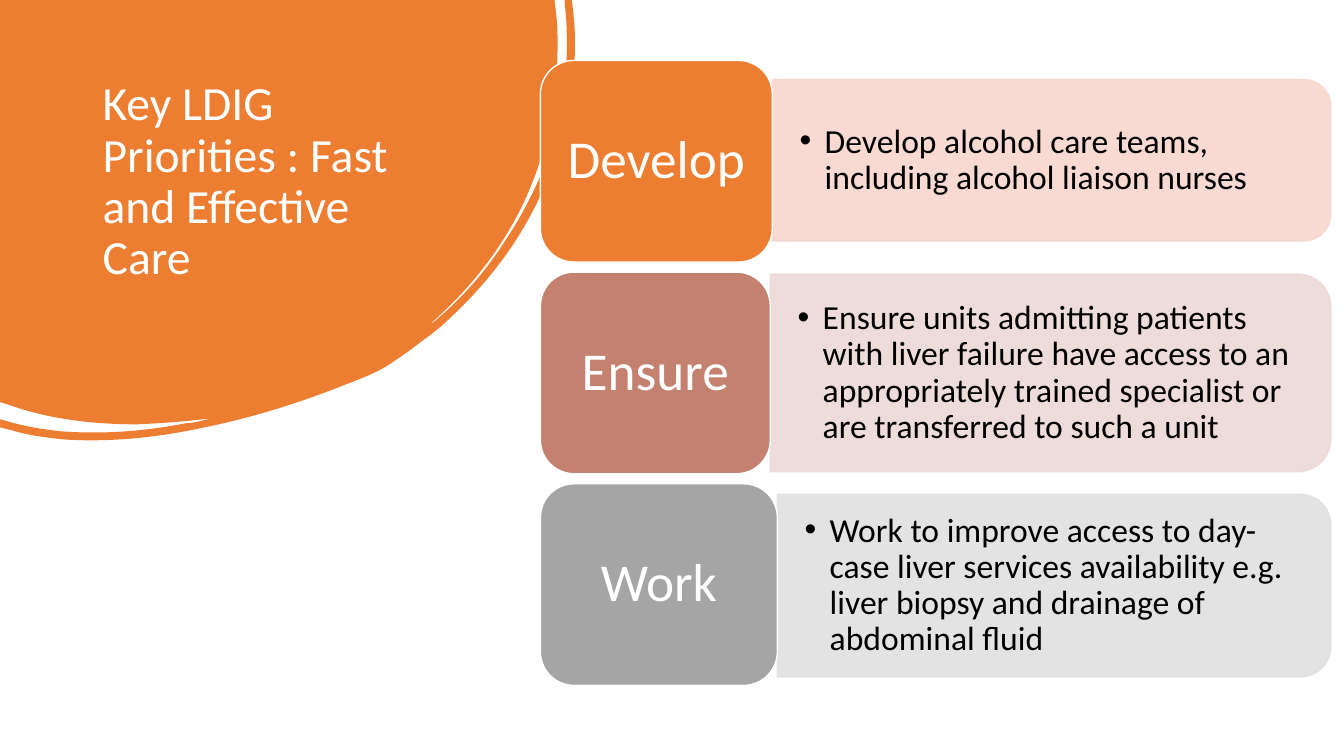
from lxml import etree
from pptx import Presentation
from pptx.dml.color import RGBColor
from pptx.enum.shapes import MSO_SHAPE
from pptx.enum.text import MSO_ANCHOR, PP_ALIGN
from pptx.oxml.ns import qn
from pptx.util import Inches, Pt

# Content
TITLE = "Key LDIG Priorities : Fast and Effective Care"
PRIORITIES = [
    {"label": "Develop", "fill": "ED7D31", "panel_fill": "F8D7CE",
     "tile_width": 2.3, "panel_height": 1.6, "panel_center": 1.59,
     "text": "Develop alcohol care teams, including alcohol liaison nurses"},
    {"label": "Ensure", "fill": "C48170", "panel_fill": "EDD9D7",
     "tile_width": 2.28, "panel_height": 1.96, "panel_center": 3.7,
     "text": "Ensure units admitting patients with liver failure have access to an "
             "appropriately trained specialist or are transferred to such a unit"},
    {"label": "Work", "fill": "A5A5A5", "panel_fill": "E1E1E1",
     "tile_width": 2.35, "panel_height": 1.81, "panel_center": 5.81,
     "text": "Work to improve access to day-case liver services availability e.g. "
             "liver biopsy and drainage of abdominal fluid"},
]

# Blob outline from the top left corner: a pair is a line end,
# six numbers are two control points and the end of a curve
BLOB = [
    (5.5, 0), (5.52, 0.17),
    (5.53, 0.26, 5.53, 0.36, 5.53, 0.45), (5.53, 1.01, 5.42, 1.54, 5.18, 2.04),
    (4.96, 2.49, 4.65, 2.88, 4.27, 3.21), (4.29, 3.21, 4.3, 3.19, 4.32, 3.18),
    (4.59, 2.95, 4.82, 2.69, 5.01, 2.39), (5.43, 1.76, 5.65, 1.07, 5.62, 0.3),
    (5.62, 0.21, 5.61, 0.12, 5.6, 0.03), (5.6, 0), (5.67, 0), (5.68, 0.07),
    (5.74, 0.54, 5.68, 1.02, 5.53, 1.5), (5.33, 2.14, 4.97, 2.68, 4.48, 3.14),
    (4.39, 3.23, 4.29, 3.31, 4.19, 3.38), (4.09, 3.46, 3.99, 3.53, 3.87, 3.61),
    (3.75, 3.69, 3.6, 3.75, 3.44, 3.81), (2.99, 3.99, 2.52, 4.14, 2.03, 4.24),
    (1.57, 4.34, 1.1, 4.39, 0.63, 4.36), (0.45, 4.34, 0.28, 4.32, 0.12, 4.27),
    (0, 4.24), (0, 4.16), (0.04, 4.17),
    (0.23, 4.23, 0.42, 4.26, 0.61, 4.28), (1.03, 4.31, 1.43, 4.28, 1.84, 4.2),
    (1.89, 4.2, 1.93, 4.19, 1.98, 4.18), (2.02, 4.17, 2.06, 4.16, 2.1, 4.15),
    (1.86, 4.18, 1.61, 4.2, 1.36, 4.21), (0.92, 4.21, 0.48, 4.16, 0.07, 4.01),
    (0, 3.99),
]

THEME = {"font": "Calibri", "accent": "ED7D31", "light": "FFFFFF", "dark": "000000",
         "title_size": 34, "label_size": 38, "body_size": 24, "panel_opacity": 90}

# Layout in inches
TILE_LEFT, TILE_TOP, TILE_HEIGHT, ROW_STEP = 5.36, 0.6, 2, 2.1
PANEL_RIGHT = 13.2
TEXT_TRIM = 0.09


def color(code):
    return RGBColor.from_string(code)


def style_shape(shape, fill, line=None):
    shape.shadow.inherit = False
    shape.fill.solid()
    shape.fill.fore_color.rgb = color(fill)
    if line is None:
        shape.line.fill.background()
    else:
        shape.line.color.rgb = color(line)
        shape.line.width = Pt(1)


def set_opacity(shape, percent):
    for node in shape._element.spPr.iter(qn("a:srgbClr")):
        etree.SubElement(node, qn("a:alpha")).set("val", str(percent * 1000))


def write(shape, text, size, text_color, margins, anchor, alignment=PP_ALIGN.LEFT):
    frame = shape.text_frame
    frame_format = {"word_wrap": True, "vertical_anchor": anchor,
                    "margin_left": Inches(margins[0]), "margin_right": Inches(margins[0]),
                    "margin_top": Inches(margins[1]), "margin_bottom": Inches(margins[1])}
    for name, value in frame_format.items():
        setattr(frame, name, value)
    paragraph = frame.paragraphs[0]
    paragraph.alignment = alignment
    paragraph.line_spacing = 0.9
    run = paragraph.add_run()
    run.text = text
    for name, value in {"name": THEME["font"], "size": Pt(size)}.items():
        setattr(run.font, name, value)
    run.font.color.rgb = color(text_color)
    return paragraph


def add_bullet(paragraph, indent):
    properties = paragraph._p.get_or_add_pPr()
    properties.set("marL", str(Inches(indent)))
    properties.set("indent", str(-Inches(indent)))
    etree.SubElement(properties, qn("a:buFont")).set("typeface", "Arial")
    etree.SubElement(properties, qn("a:buChar")).set("char", "•")


def add_blob(slide):
    builder = slide.shapes.build_freeform(0, 0)
    builder.add_line_segments([(Inches(x), Inches(y)) for *_, x, y in BLOB], close=True)
    blob = builder.convert_to_shape()
    style_shape(blob, THEME["accent"])

    # Bend the segments that have control points
    lines = list(blob._element.spPr.iter(qn("a:lnTo")))
    for line, segment in zip(lines, BLOB):
        if len(segment) == 2:
            continue
        curve = etree.Element(qn("a:cubicBezTo"))
        for x, y in zip(segment[::2], segment[1::2]):
            point = etree.SubElement(curve, qn("a:pt"))
            point.set("x", str(Inches(x)))
            point.set("y", str(Inches(y)))
        line.getparent().replace(line, curve)


def add_priority(slide, row, priority):
    panel_left = TILE_LEFT + priority["tile_width"]
    width, height = PANEL_RIGHT - panel_left, priority["panel_height"]
    center_x, center_y = panel_left + width / 2, priority["panel_center"]

    # Panel: turned a quarter so that the round corners face right
    panel = slide.shapes.add_shape(
        MSO_SHAPE.ROUND_2_SAME_RECTANGLE, Inches(center_x - height / 2),
        Inches(center_y - width / 2), Inches(height), Inches(width))
    panel.rotation = 90
    style_shape(panel, priority["panel_fill"], priority["panel_fill"])
    set_opacity(panel, THEME["panel_opacity"])

    # Panel text
    text_height = height - 2 * TEXT_TRIM
    box = slide.shapes.add_textbox(
        Inches(panel_left), Inches(center_y - text_height / 2),
        Inches(width - TEXT_TRIM), Inches(text_height))
    paragraph = write(box, priority["text"], THEME["body_size"], THEME["dark"],
                      (0.27, 0.14), MSO_ANCHOR.MIDDLE)
    add_bullet(paragraph, 0.25)

    # Label tile
    tile = slide.shapes.add_shape(
        MSO_SHAPE.ROUNDED_RECTANGLE, Inches(TILE_LEFT), Inches(TILE_TOP + row * ROW_STEP),
        Inches(priority["tile_width"]), Inches(TILE_HEIGHT))
    style_shape(tile, priority["fill"], THEME["light"])
    write(tile, priority["label"], THEME["label_size"], THEME["light"],
          (0.16, 0.08), MSO_ANCHOR.MIDDLE, PP_ALIGN.CENTER)


def main():
    presentation = Presentation()
    presentation.slide_width = Inches(13.33)
    presentation.slide_height = Inches(7.5)
    slide = presentation.slides.add_slide(presentation.slide_layouts[6])

    add_blob(slide)
    title = slide.shapes.add_textbox(Inches(0.92), Inches(0.74), Inches(3.52), Inches(2.22))
    write(title, TITLE, THEME["title_size"], THEME["light"], (0.1, 0.05), MSO_ANCHOR.TOP)
    for row, priority in enumerate(PRIORITIES):
        add_priority(slide, row, priority)

    presentation.save("out.pptx")


if __name__ == "__main__":
    main()
